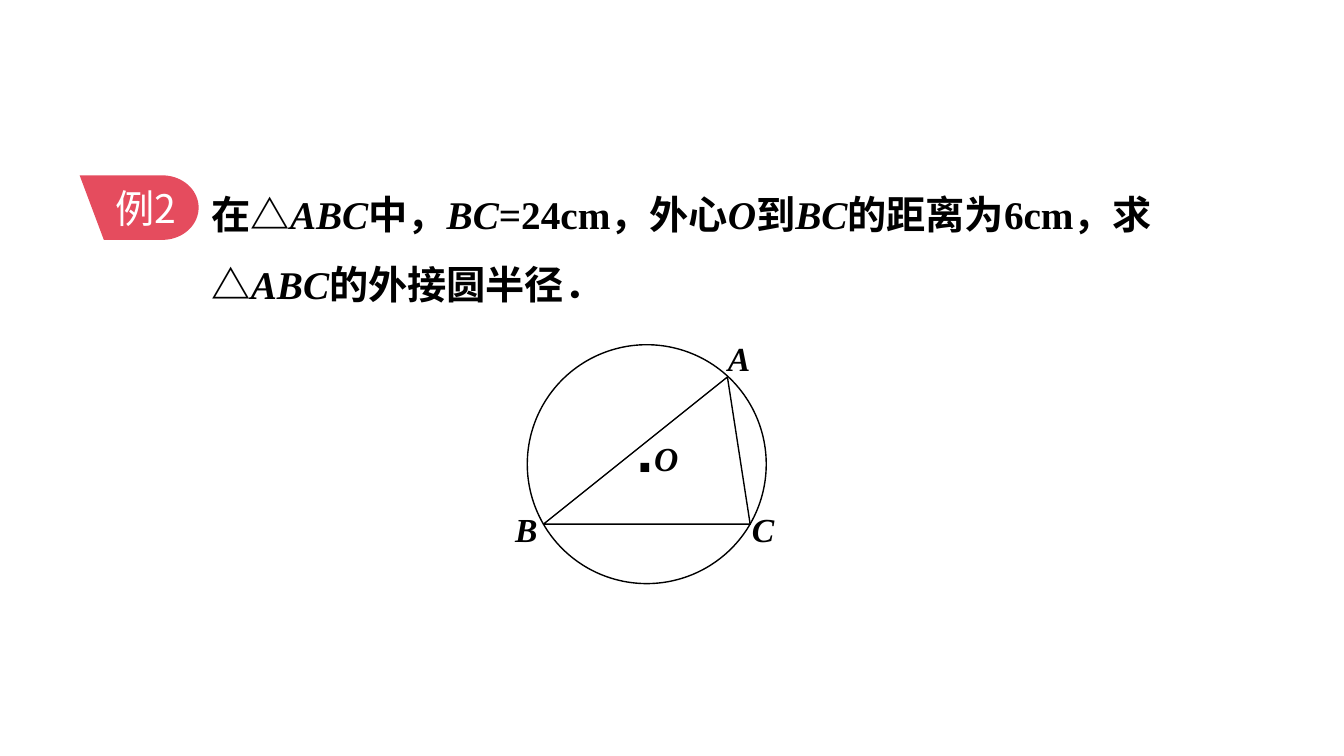
import math
from dataclasses import dataclass

from lxml import etree
from pptx import Presentation
from pptx.dml.color import RGBColor
from pptx.enum.shapes import MSO_SHAPE
from pptx.enum.text import MSO_ANCHOR, MSO_AUTO_SIZE, PP_ALIGN
from pptx.oxml.ns import qn
from pptx.util import Inches, Pt

OVAL, TRI = MSO_SHAPE.OVAL, MSO_SHAPE.ISOSCELES_TRIANGLE
MIDDLE, CENTER = MSO_ANCHOR.MIDDLE, PP_ALIGN.CENTER
GROW = MSO_AUTO_SIZE.SHAPE_TO_FIT_TEXT


@dataclass(frozen=True)
class Theme:
    ink: RGBColor = RGBColor(0, 0, 0)
    red: RGBColor = RGBColor(0xE5, 0x4C, 0x5E)
    white: RGBColor = RGBColor(255, 255, 255)
    serif: str = "Times New Roman"
    sans: str = "Arial"
    han: str = "Noto Sans CJK SC"
    body: int = 28
    label: int = 24
    dot: int = 44


THEME = Theme()

# Problem text as (words, italic)
TASK = [
    ("在△", False), ("ABC", True), ("中，", False), ("BC", True),
    ("=24cm，外心", False), ("O", True), ("到", False), ("BC", True),
    ("的距离为6cm，求△", False), ("ABC", True), ("的外接圆半径．", False),
]

# Point labels: name, left, top, width
POINTS = [("O", 6.39, 4.3, 0.45), ("A", 7.12, 3.3, 0.43),
          ("B", 5.01, 5, 0.43), ("C", 7.36, 5, 0.43)]


def add_run(para, words, size, face, color, bold=True, italic=False):
    run = para.add_run()
    run.text = words
    font = run.font
    font.size, font.name = Pt(size), face
    font.bold, font.italic = bold, italic
    font.color.rgb = color
    # East Asian face
    east = etree.SubElement(font._element, qn("a:ea"))
    east.set("typeface", THEME.han)


def set_pad(frame, left, top, right, low):
    frame.margin_left, frame.margin_top = Inches(left), Inches(top)
    frame.margin_right, frame.margin_bottom = Inches(right), Inches(low)


def mid_text(shape):
    frame = shape.text_frame
    frame.word_wrap = True
    frame.vertical_anchor = MIDDLE
    para = frame.paragraphs[0]
    para.alignment = CENTER
    return para


def add_task(slide):
    box = slide.shapes.add_textbox(
        Inches(1.97), Inches(1.58), Inches(10.46), Inches(1.46))
    frame = box.text_frame
    frame.word_wrap, frame.auto_size = True, GROW
    set_pad(frame, 0.13, 0.07, 0.13, 0.07)
    para = frame.paragraphs[0]
    para.line_spacing = 1.5
    for words, italic in TASK:
        add_run(para, words, THEME.body, THEME.serif, THEME.ink, italic=italic)


def add_tag(slide):
    # Slanted left side, rounded right end
    turns = [math.radians(a) for a in range(-90, 91, 5)]
    curve = [(Inches(1.61 + 0.36 * math.cos(t)),
              Inches(2.06 + 0.32 * math.sin(t))) for t in turns]
    pen = slide.shapes.build_freeform(Inches(0.79), Inches(1.74))
    pen.add_line_segments(curve + [(Inches(1.03), Inches(2.38))], close=True)
    tag = pen.convert_to_shape()
    tag.shadow.inherit = False
    tag.fill.solid()
    tag.fill.fore_color.rgb = THEME.red
    tag.line.fill.background()
    para = mid_text(tag)
    set_pad(tag.text_frame, 0.26, 0.07, 0.13, 0.07)
    add_run(para, "例2", THEME.body, THEME.han, THEME.white, bold=False)


def add_form(group, kind, left, top, width, height):
    form = group.shapes.add_shape(
        kind, Inches(left), Inches(top), Inches(width), Inches(height))
    form.shadow.inherit = False
    form.fill.background()
    form.line.color.rgb = THEME.ink
    form.line.width = Pt(1)
    return form


def add_point(group, name, left, top, width):
    box = group.shapes.add_textbox(
        Inches(left), Inches(top), Inches(width), Inches(0.5))
    frame = box.text_frame
    frame.word_wrap, frame.auto_size = False, GROW
    add_run(frame.paragraphs[0], name, THEME.label, THEME.serif, THEME.ink,
            italic=True)


def add_figure(slide):
    group = slide.shapes.add_group_shape()
    # Circle with its centre dot
    circle = add_form(group, OVAL, 5.23, 3.42, 2.37, 2.37)
    add_run(mid_text(circle), "·", THEME.dot, THEME.sans, THEME.ink)
    # Triangle ABC
    tri = add_form(group, TRI, 5.39, 3.74, 2.05, 1.46)
    tri.adjustments[0] = 0.89
    for point in POINTS:
        add_point(group, *point)


def main():
    deck = Presentation()
    deck.slide_width, deck.slide_height = Inches(13.33), Inches(7.5)
    slide = deck.slides.add_slide(deck.slide_layouts[6])
    add_task(slide)
    add_tag(slide)
    add_figure(slide)
    deck.save("out.pptx")


if __name__ == "__main__":
    main()
